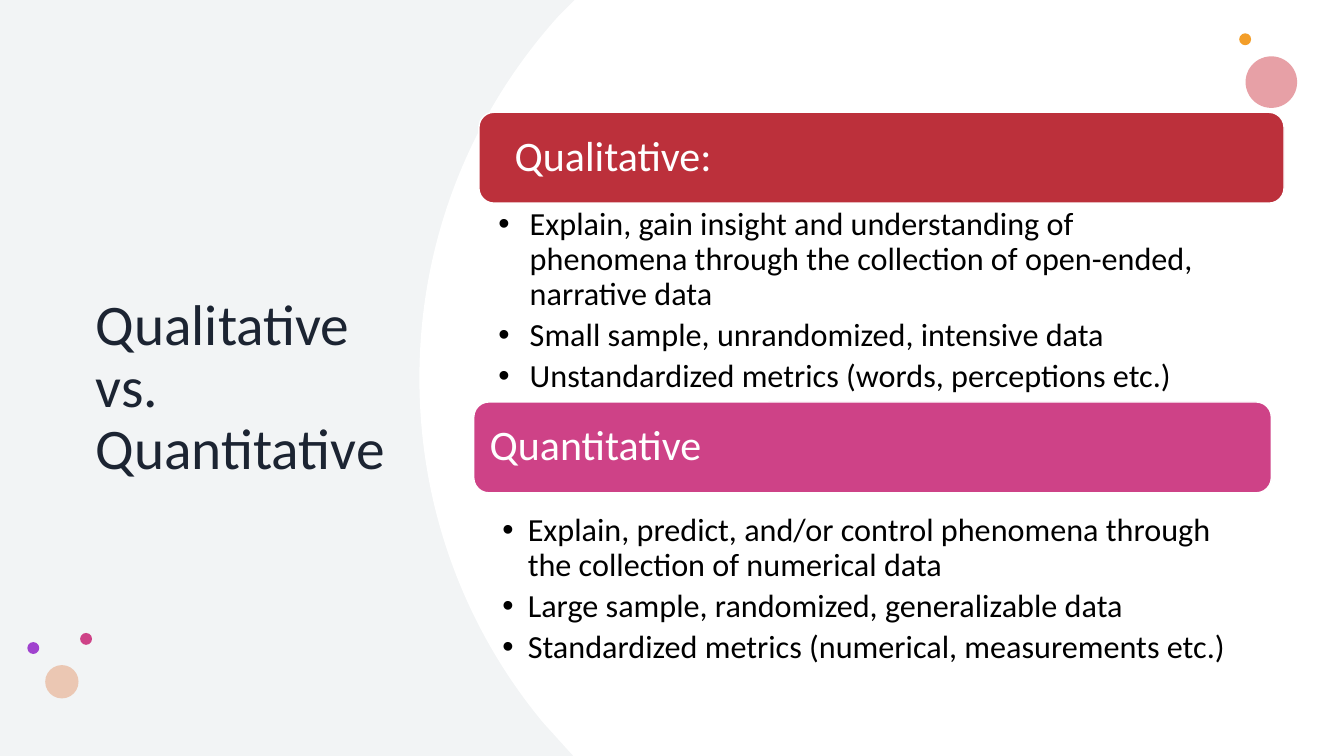
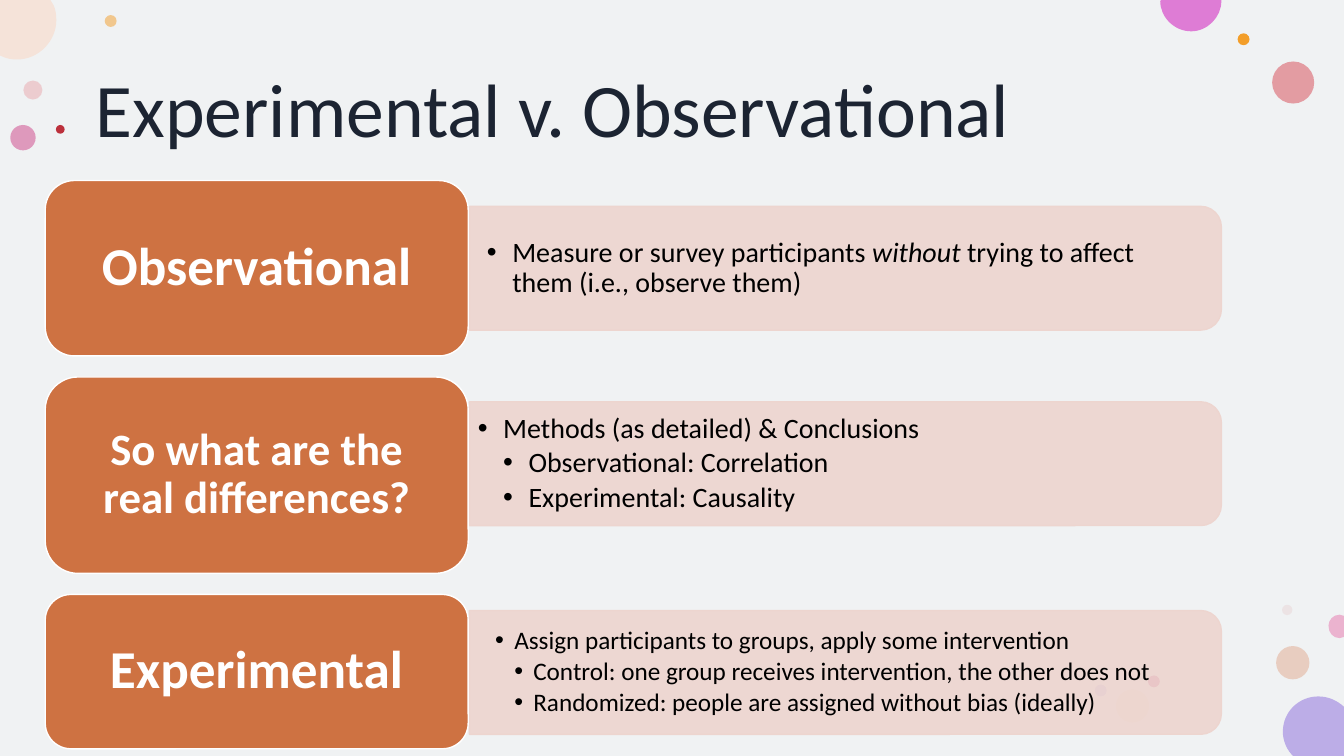
"""Build two slides that compare kinds of research."""
from dataclasses import dataclass

from pptx import Presentation, util as u
from pptx.dml.color import RGBColor
from pptx.enum import shapes, text
from pptx.oxml import ns, xmlchemy


@dataclass(frozen=True)
class Theme:
    """Hold the colours, type sizes and page size in cm."""
    wide: float = 33.87
    high: float = 19.05
    font: str = "Calibri"
    ink: str = "1C2432"
    black: str = "000000"
    white: str = "FFFFFF"
    mist: str = "D5DBDE"
    fog: str = "F0F2F3"
    red: str = "BC303B"
    pink: str = "CE4287"
    rose: str = "DE7C84"
    blush: str = "EDD5CF"
    clay: str = "CE7242"
    gold: str = "F39E29"
    lilac: str = "BCADE7"
    peach: str = "F5E3D9"
    side: int = 41
    head: int = 54
    bar: int = 30
    card: int = 38
    small: int = 32
    list: int = 23
    note: int = 20
    fine: int = 18


T = Theme()


def tint(fill, shade):
    """Make a fill solid in one colour."""
    fill.solid()
    fill.fore_color.rgb = RGBColor.from_string(shade)


def fade(shape, alpha):
    """Set the opacity of a solid fill in percent."""
    node = xmlchemy.OxmlElement("a:alpha")
    node.set("val", str(alpha * 1000))
    shape.element.spPr.find(".//" + ns.qn("a:srgbClr")).append(node)


def paint(shape, shade, alpha=100, edge=None):
    """Give a shape its fill, opacity and edge, without a shadow."""
    shape.shadow.inherit = False
    tint(shape.fill, shade)
    if alpha < 100:
        fade(shape, alpha)
    if edge:
        tint(shape.line.fill, edge)
        shape.line.width = u.Pt(1)
    else:
        shape.line.fill.background()


def place(shape, x, y, w, h):
    """Move and size a shape in cm."""
    shape.left, shape.top = u.Cm(x), u.Cm(y)
    shape.width, shape.height = u.Cm(w), u.Cm(h)


def add(slide, kind, x, y, w, h):
    """Add a preset shape in cm."""
    return slide.shapes.add_shape(kind, u.Cm(x), u.Cm(y), u.Cm(w), u.Cm(h))


def disc(slide, x, y, r, shade, alpha=100):
    """Draw a circle about a centre."""
    shape = add(slide, shapes.MSO_SHAPE.OVAL, x - r, y - r, 2 * r, 2 * r)
    paint(shape, shade, alpha)


def curve(slide, shade, first, *steps):
    """Draw an outline; a step of two numbers is a line, of six a curve."""
    pen = slide.shapes.build_freeform(u.Cm(first[0]), u.Cm(first[1]))
    pen.add_line_segments([(u.Cm(step[i]), u.Cm(step[i + 1]))
                           for step in steps for i in range(0, len(step), 2)])
    shape = pen.convert_to_shape()
    track = shape.element.spPr.find(".//" + ns.qn("a:path"))
    nodes = iter(track.findall(ns.qn("a:lnTo")))
    for step in steps:
        group = [next(nodes) for _ in range(len(step) // 2)]
        if len(group) == 3:
            bend = xmlchemy.OxmlElement("a:cubicBezTo")
            group[0].addprevious(bend)
            for node in group:
                bend.append(node[0])
                track.remove(node)
    paint(shape, shade)


def frame(shape, inset, anchor=text.MSO_ANCHOR.MIDDLE, pad=0.1):
    """Set up the text frame of a shape."""
    tf = shape.text_frame
    tf.word_wrap = True
    tf.auto_size = text.MSO_AUTO_SIZE.NONE
    tf.vertical_anchor = anchor
    tf.margin_left = tf.margin_right = u.Cm(inset)
    tf.margin_top = tf.margin_bottom = u.Cm(pad)
    return tf


def write(para, runs, size, shade, bold=False, align=text.PP_ALIGN.LEFT, gap=0):
    """Fill a paragraph run by run; a (words,) tuple is set in italics."""
    para.alignment = align
    para.line_spacing = 0.9
    para.space_before, para.space_after = u.Pt(0), u.Pt(gap)
    for item in runs:
        slant = isinstance(item, tuple)
        run = para.add_run()
        run.text = item[0] if slant else item
        run.font.name, run.font.size = T.font, u.Pt(size)
        run.font.bold, run.font.italic = bold, slant
        run.font.color.rgb = RGBColor.from_string(shade)


def dot(para, level, step):
    """Give a paragraph a bullet and a hanging indent in cm."""
    para.level = level
    props = para._p.get_or_add_pPr()
    props.set("marL", str(u.Cm(step * level)))
    props.set("indent", str(-u.Cm(step)))
    mark = xmlchemy.OxmlElement("a:buChar")
    mark.set("char", "•")
    props.append(mark)


def title(slide, words, size, *box):
    """Set the title placeholder, on top."""
    shape = slide.shapes.title
    shape.element.getparent().append(shape.element)
    place(shape, *box)
    write(frame(shape, 0.25).paragraphs[0], [words], size, T.ink)


def points(slide, index, rows, size, box, inset, step, gap,
           anchor=text.MSO_ANCHOR.MIDDLE):
    """Set a bulleted list of (level, runs) in a body placeholder, on top."""
    shape = slide.placeholders[index]
    shape.element.getparent().append(shape.element)
    place(shape, *box)
    tf = frame(shape, inset, anchor)
    for i, (level, runs) in enumerate(rows):
        para = tf.add_paragraph() if i else tf.paragraphs[0]
        write(para, runs, size, T.black, gap=gap * size)
        dot(para, level, step)


def label(slide, words, size, shade, box, inset, bold=False,
          align=text.PP_ALIGN.LEFT):
    """Draw a rounded box with a white edge and white text."""
    shape = add(slide, shapes.MSO_SHAPE.ROUNDED_RECTANGLE, *box)
    paint(shape, shade, edge=T.white)
    write(frame(shape, inset).paragraphs[0], [words], size, T.white, bold, align)


def panel(slide, x, y, w, h):
    """Draw a pale panel with its right corners rounded."""
    kind = shapes.MSO_SHAPE.ROUND_2_SAME_RECTANGLE
    shape = add(slide, kind, x + (w - h) / 2, y + (h - w) / 2, h, w)
    shape.rotation = 90
    paint(shape, T.blush, 90, T.blush)


def start(deck, layout, shade, alpha=100):
    """Add a slide with a full ground."""
    slide = deck.slides.add_slide(deck.slide_layouts[layout])
    ground = add(slide, shapes.MSO_SHAPE.RECTANGLE, 0, 0, T.wide, T.high)
    paint(ground, shade, alpha)
    return slide


def types(deck):
    """Build the slide on qualitative and quantitative work."""
    slide = start(deck, 3, T.mist, 30)
    curve(slide, T.white, (14.48, 0), (T.wide, 0), (T.wide, T.high),
          (14.45, T.high), (13.69, 18.21),
          (11.73, 15.85, 10.57, 12.83, 10.57, 9.53),
          (10.57, 5.99, 11.91, 2.79, 14.12, 0.36))
    for item in [
        (32.04, 2.07, 0.65, T.rose, 72),
        (31.38, 0.99, 0.15, T.gold),
        (2.17, 16.1, 0.15, T.pink),
        (1.56, 17.18, 0.42, "EBC7B3"),
        (0.84, 16.33, 0.15, "A042CE"),
    ]:
        disc(slide, *item)
    title(slide, "Qualitative vs. Quantitative", T.side, 2.16, 2.64, 7.95, 14.33)
    label(slide, "Quantitative", T.bar, T.pink, (11.94, 10.13, 20.1, 2.29), 0.29)
    top = text.MSO_ANCHOR.TOP
    points(slide, 2, [
        (1, ["Explain, predict, and/or control phenomena through "
             "the collection of numerical data"]),
        (1, ["Large sample, randomized, generalizable data"]),
        (1, ["Standardized metrics (numerical, measurements etc.)"]),
    ], T.list, (12.02, 12.84, 19.76, 4.22), 0.64, 0.64, 0.2, top)
    points(slide, 1, [
        (1, ["Explain, gain insight and understanding of phenomena through "
             "the collection of open-ended, narrative data"]),
        (1, ["Small sample, unrandomized, intensive data"]),
        (1, ["Unstandardized metrics (words, perceptions etc.)"]),
    ], T.list, (11.92, 5.14, 19.76, 4.95), 0.64, 0.79, 0.2, top)
    label(slide, "Qualitative:", T.bar, T.red, (12.07, 2.83, 20.29, 2.29), 0.79)


def spots(slide):
    """Scatter the discs and cut circles of the open ground."""
    for item in [
        (0.83, 2.27, 0.24, "E9A8AD", 50),
        (2.79, 0.53, 0.15, T.gold, 50),
        (32.58, 16.7, 0.42, "E2AA8E", 50),
        (0.58, 3.47, 0.32, T.pink, 50),
        (32.59, 2.08, 0.53, T.rose, 72),
        (31.34, 0.99, 0.15, T.gold),
        (32.44, 15.37, 0.13, "E3BEBE", 28),
        (29.08, 17.17, 0.15, T.pink),
        (28.54, 17.79, 0.42, T.peach),
        (27.74, 17.4, 0.15, T.lilac),
        (1.52, 3.26, 0.11, T.red),
    ]:
        disc(slide, *item)
    curve(slide, T.lilac, (33.22, 17.55),
          (33.48, 17.55, 33.69, 17.65, T.wide, 17.81), (T.wide, T.high),
          (32.59, T.high), (32.54, 19),
          (32.41, 18.85, 32.33, 18.64, 32.33, 18.44),
          (32.33, 17.93, 32.74, 17.55, 33.22, 17.55))
    curve(slide, T.peach, (0, 0), (1.27, 0), (1.35, 0.13),
          (1.4, 0.23, 1.42, 0.36, 1.42, 0.51),
          (1.42, 1.04, 0.97, 1.5, 0.43, 1.5),
          (0.28, 1.5, 0.15, 1.47, 0.05, 1.42), (0, 1.4))
    curve(slide, "DE7CD5", (29.26, 0), (30.78, 0), (30.78, 0.03),
          (30.78, 0.43, 30.43, 0.79, 30.02, 0.79),
          (29.59, 0.79, 29.24, 0.43, 29.24, 0.03))
    curve(slide, "EBB3CF", (33.76, 15.49), (T.wide, 15.52), (T.wide, 16.05),
          (33.76, 16.08), (33.6, 16.08, 33.48, 15.95, 33.48, 15.77),
          (33.48, 15.62, 33.6, 15.49, 33.76, 15.49))


def designs(deck):
    """Build the slide on experimental and observational work."""
    slide = start(deck, 4, T.fog)
    spots(slide)
    title(slide, "Experimental v. Observational", T.head, 2.16, 1.02, 29.62, 3.68)
    rows = [
        ("Observational", T.card, 4.42, 0, 1, T.note, 0.43, 0.64, [
            (1, ["Measure or survey participants ", ("without",),
                 " trying to affect them (i.e., observe them)"])]),
        ("So what are the real differences?", T.small, 4.95, -0.29, 2,
         T.note, 0.2, 0.64, [
             (1, ["Methods (as detailed) & Conclusions"]),
             (2, ["Observational: Correlation"]),
             (2, ["Experimental: Causality"])]),
        ("Experimental", T.card, 3.89, 0.02, 4, T.fine, 0.64, 0.48, [
            (1, ["Assign participants to groups, apply some intervention"]),
            (2, ["Control: one group receives intervention, the other does not"]),
            (2, ["Randomized: people are assigned without bias (ideally)"])]),
    ]
    y, deep = 4.55, 3.12
    for name, big, high, shift, index, size, inset, step, items in rows:
        rise = y + (high - deep) / 2 + shift
        panel(slide, 11.83, rise, 18.95, deep)
        points(slide, index, items, size, (11.84, rise + 0.15, 18.8, 2.82),
               inset, step, 0.15)
        label(slide, name, big, T.clay, (1.14, y, 10.66, high), 0.62, True,
              text.PP_ALIGN.CENTER)
        y += high + 0.53
    spare = slide.placeholders[3].element
    spare.getparent().remove(spare)


def main():
    """Build and save the deck."""
    deck = Presentation()
    deck.slide_width, deck.slide_height = u.Cm(T.wide), u.Cm(T.high)
    types(deck)
    designs(deck)
    deck.save("out.pptx")


if __name__ == "__main__":
    main()
